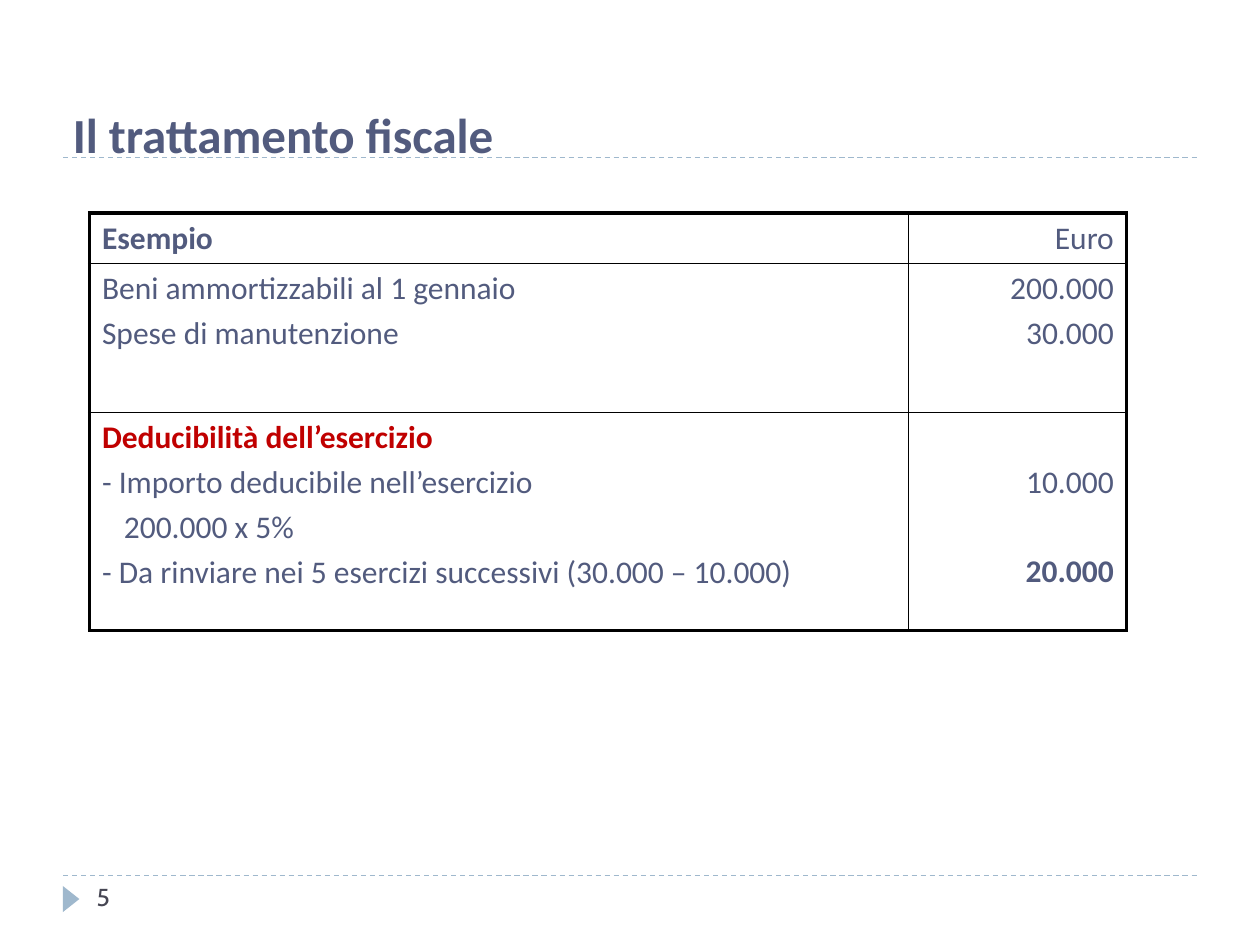
"""Build the tax treatment slide with its worked example table."""
import lxml.etree
import pptx
import pptx.dml.color
import pptx.enum.dml
import pptx.enum.shapes
import pptx.enum.text
import pptx.oxml.ns
import pptx.util

Pt = pptx.util.Pt
qn = pptx.oxml.ns.qn
ALIGN = pptx.enum.text.PP_ALIGN
COLORS = {"ink": "525B7E", "accent": "C00000", "rule": "9FB8CD",
          "number": "464653", "border": "000000"}


def add_run(paragraph, text, size, color, bold=False, font="Calibri"):
    run = paragraph.add_run()
    run.text = text
    run.font.name = font
    run.font.size = Pt(size)
    run.font.bold = bold
    run.font.color.rgb = pptx.dml.color.RGBColor.from_string(COLORS[color])


def set_borders(cell, widths):
    properties = cell._tc.get_or_add_tcPr()
    for position, (side, width) in enumerate(widths.items()):
        line = lxml.etree.Element(qn(f"a:ln{side}"), w=str(Pt(width)))
        fill = lxml.etree.SubElement(line, qn("a:solidFill"))
        lxml.etree.SubElement(fill, qn("a:srgbClr"), val=COLORS["border"])
        properties.insert(position, line)


presentation = pptx.Presentation()
presentation.slide_width = Pt(720)
presentation.slide_height = Pt(540)
slide = presentation.slides.add_slide(presentation.slide_layouts[6])
rule_color = pptx.dml.color.RGBColor.from_string(COLORS["rule"])

for y in (500.4, 90):
    rule = slide.shapes.add_connector(
        pptx.enum.shapes.MSO_CONNECTOR.STRAIGHT, Pt(36), Pt(y), Pt(684), Pt(y))
    rule.line.color.rgb = rule_color
    rule.line.width = Pt(0.75)
    rule.line.dash_style = pptx.enum.dml.MSO_LINE.DASH
    lxml.etree.SubElement(rule._element.spPr, qn("a:effectLst"))

marker = slide.shapes.add_shape(
    pptx.enum.shapes.MSO_SHAPE.ISOSCELES_TRIANGLE, Pt(33.1), Pt(509), Pt(15), Pt(9.5))
marker.rotation = 90
marker.shadow.inherit = False
marker.fill.solid()
marker.fill.fore_color.rgb = rule_color
marker.line.fill.background()

number_box = slide.shapes.add_textbox(Pt(48.2), Pt(500.4), Pt(156), Pt(28.8))
number_box.text_frame.word_wrap = True
add_run(number_box.text_frame.paragraphs[0], "5", 14, "number", font="Cabin")

title_box = slide.shapes.add_textbox(Pt(34.5), Pt(54.7), Pt(558), Pt(75))
title_box.text_frame.word_wrap = True
title_box.text_frame.margin_top = Pt(5)
add_run(title_box.text_frame.paragraphs[0], "Il trattamento fiscale", 28, "ink", True)

SPACING = 3.6
LINE_STEP = 25.5
INDENT = 12.5
row_heights = (28.6, 85.3, 124.6)
column_widths = (468, 124.6)
cell_lines = [
    [[("Esempio", "ink", True, 0, 0)],
     [("Euro", "ink", False, 0, 0)]],
    [[("Beni ammortizzabili al 1 gennaio", "ink", False, 0, 0),
      ("Spese di manutenzione", "ink", False, 0, 0)],
     [("200.000", "ink", False, 0, 0),
      ("30.000", "ink", False, 0, 0)]],
    [[("Deducibilità dell’esercizio", "accent", True, 0, 0),
      ("- Importo deducibile nell’esercizio", "ink", False, 0, 0),
      ("200.000 x 5%", "ink", False, INDENT, 0),
      ("- Da rinviare nei 5 esercizi successivi (30.000 – 10.000)", "ink", False, 0, 0)],
     [("10.000", "ink", False, 0, 1),
      ("20.000", "ink", True, 0, 1)]],
]
table = slide.shapes.add_table(
    3, 2, Pt(51.1), Pt(121.7), Pt(sum(column_widths)), Pt(sum(row_heights))).table
table.first_row = False
table.horz_banding = False
for column, width in zip(table.columns, column_widths):
    column.width = Pt(width)
for row, height in zip(table.rows, row_heights):
    row.height = Pt(height)

for row_index, row_lines in enumerate(cell_lines):
    for column_index, lines in enumerate(row_lines):
        cell = table.cell(row_index, column_index)
        cell.fill.background()
        set_borders(cell, {"L": 2.25 if column_index == 0 else 1,
                           "R": 2.25 if column_index == 1 else 1,
                           "T": 2.25 if row_index == 0 else 1,
                           "B": 2.25 if row_index == 2 else 1})
        for line_index, (text, color, bold, indent, skipped) in enumerate(lines):
            if line_index == 0:
                paragraph = cell.text_frame.paragraphs[0]
                cell.margin_top = Pt(3.6 + skipped * LINE_STEP)
            else:
                paragraph = cell.text_frame.add_paragraph()
                paragraph.space_before = Pt(SPACING + skipped * LINE_STEP)
            paragraph.alignment = ALIGN.RIGHT if column_index else ALIGN.LEFT
            if indent:
                paragraph._p.get_or_add_pPr().set("marL", str(Pt(indent)))
            add_run(paragraph, text, 18, color, bold)

presentation.save("out.pptx")
